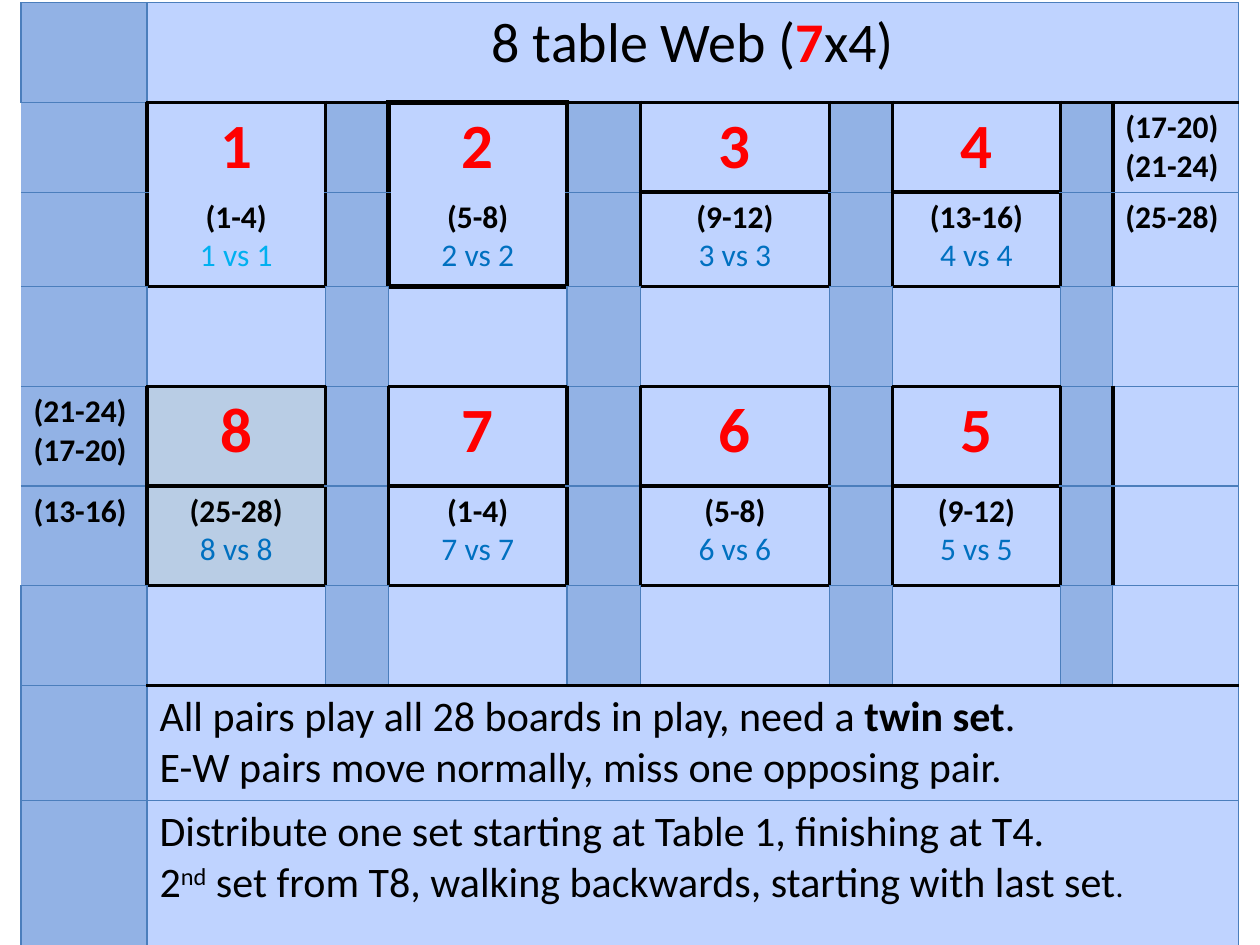
"""Builds a one-slide seating chart for an eight-table Web movement."""
from dataclasses import dataclass

from lxml import etree
from pptx import Presentation
from pptx import util as u
from pptx.dml.color import RGBColor
from pptx.enum import text
from pptx.oxml import ns


@dataclass(frozen=True)
class Theme:
    font: str = "Calibri"
    light: str = "BFD3FF"
    dark: str = "92B2E5"
    accent: str = "B9CDE5"
    thin: tuple = ("4B7EBC", 0.75)
    thick: tuple = ("000000", 2.25)
    heavy: tuple = ("000000", 3)
    ink: str = "000000"
    red: str = "FF0000"
    blue: str = "0070C0"
    sky: str = "00B0F0"
    title: int = 32
    number: int = 36
    body: int = 24
    label: int = 18


T = Theme()
LEFT, TOP = 12, 1.5
WIDTHS = [72, 102, 36, 102, 42, 108, 36, 96, 30, 72]
HEIGHTS = [57, 51, 54, 57, 57, 57, 57, 36, 99]
TABLE_COLS = (1, 3, 5, 7)
LAST = len(WIDTHS) - 1
MERGED_ROWS = (0, 7, 8)

TABLES = {
    1: [("1", "(1-4)"), ("2", "(5-8)"), ("3", "(9-12)"), ("4", "(13-16)")],
    4: [("8", "(25-28)"), ("7", "(1-4)"), ("6", "(5-8)"), ("5", "(9-12)")],
}
WAITING = {
    (1, LAST): ["(17-20)", "(21-24)"],
    (2, LAST): ["(25-28)"],
    (4, 0): ["(21-24)", "(17-20)"],
    (5, 0): ["(13-16)"],
}
TITLE = [[("8 table Web (", {}), ("7", {"bold": True, "color": T.red}), ("x4)", {})]]
NOTES = {
    7: [
        [("All pairs play all 28 boards in play, need a ", {}),
         ("twin set", {"bold": True}), (".", {})],
        [("E-W pairs move normally, miss one opposing pair.", {})],
    ],
    8: [
        [("Distribute one set starting at Table 1, finishing at T4.", {})],
        [("2", {}), ("nd", {"raised": True}),
         (" set from T8, walking backwards, starting with last set", {}),
         (".", {"size": T.label})],
    ],
}


def write(cell, paragraphs, size, center=False):
    """Fills a cell with paragraphs made of (text, style) runs."""
    tf = cell.text_frame
    for i, runs in enumerate(paragraphs):
        p = tf.add_paragraph() if i else tf.paragraphs[0]
        p.font.name = T.font
        p.alignment = text.PP_ALIGN.CENTER if center else text.PP_ALIGN.LEFT
        for words, style in runs:
            r = p.add_run()
            r.text = words
            r.font.name = T.font
            r.font.size = u.Pt(style.get("size", size))
            r.font.bold = style.get("bold", False)
            r.font.color.rgb = RGBColor.from_string(style.get("color", T.ink))
            if style.get("raised"):
                r.font._element.set("baseline", "30000")


def grid_edges():
    """Returns the lines left of, and above, each grid position."""
    rows, cols = len(HEIGHTS), len(WIDTHS)
    across = {(r, c): T.thin for r in range(rows + 1) for c in range(cols)}
    down = {(r, c): T.thin for r in range(rows) for c in range(cols + 1)}
    for r in range(1, 6):
        down[r, 0] = None
    for c in range(1, cols):
        across[1, c] = across[7, c] = T.thick
    for top, tables in TABLES.items():
        for c, (number, _) in zip(TABLE_COLS, tables):
            line = T.heavy if number == "2" else T.thick
            across[top, c] = across[top + 2, c] = line
            across[top + 1, c] = None if number in "12" else line
            for r in (top, top + 1):
                down[r, c] = down[r, c + 1] = line
        for r in (top, top + 1):
            down[r, LAST] = T.thick
    return across, down


def set_borders(cell, lines):
    """Adds left, right, top and bottom lines to a cell."""
    tc_pr = cell._tc.get_or_add_tcPr()
    for side, line in zip("LRTB", lines):
        ln = etree.SubElement(tc_pr, ns.qn(f"a:ln{side}"))
        if line is None:
            ln.set("w", "0")
            etree.SubElement(ln, ns.qn("a:noFill"))
            continue
        color, width = line
        ln.set("w", str(int(u.Pt(width))))
        fill = etree.SubElement(ln, ns.qn("a:solidFill"))
        etree.SubElement(fill, ns.qn("a:srgbClr")).set("val", color)


def cell_color(r, c):
    """Chooses the fill for a grid position."""
    if (r, c) in ((4, 1), (5, 1)):
        return T.accent
    is_aisle = c % 2 == 0 and (c == 0 or r not in MERGED_ROWS)
    return T.dark if is_aisle else T.light


def main():
    prs = Presentation()
    prs.slide_width, prs.slide_height = u.Pt(720), u.Pt(540)
    s = prs.slides.add_slide(prs.slide_layouts[6])
    table = s.shapes.add_table(len(HEIGHTS), len(WIDTHS), u.Pt(LEFT), u.Pt(TOP),
                               u.Pt(sum(WIDTHS)), u.Pt(sum(HEIGHTS))).table
    table.first_row = table.horz_banding = False
    for column, width in zip(table.columns, WIDTHS):
        column.width = u.Pt(width)
    for row, height in zip(table.rows, HEIGHTS):
        row.height = u.Pt(height)

    across, down = grid_edges()
    for r in range(len(HEIGHTS)):
        for c in range(len(WIDTHS)):
            cell = table.cell(r, c)
            set_borders(cell, (down[r, c], down[r, c + 1], across[r, c], across[r + 1, c]))
            cell.fill.solid()
            cell.fill.fore_color.rgb = RGBColor.from_string(cell_color(r, c))
    for r in MERGED_ROWS:
        table.cell(r, 1).merge(table.cell(r, LAST))

    write(table.cell(0, 1), TITLE, T.title, center=True)
    for r, paragraphs in NOTES.items():
        write(table.cell(r, 1), paragraphs, T.body)
    for position, boards in WAITING.items():
        write(table.cell(*position), [[(b, {"bold": True})] for b in boards], T.label)
    for top, tables in TABLES.items():
        for c, (number, boards) in zip(TABLE_COLS, tables):
            write(table.cell(top, c), [[(number, {"bold": True, "color": T.red})]],
                  T.number, center=True)
            match_color = T.sky if number == "1" else T.blue
            write(table.cell(top + 1, c),
                  [[(boards, {"bold": True})],
                   [(f"{number} vs {number}", {"color": match_color})]],
                  T.label, center=True)
    prs.save("out.pptx")


if __name__ == "__main__":
    main()
